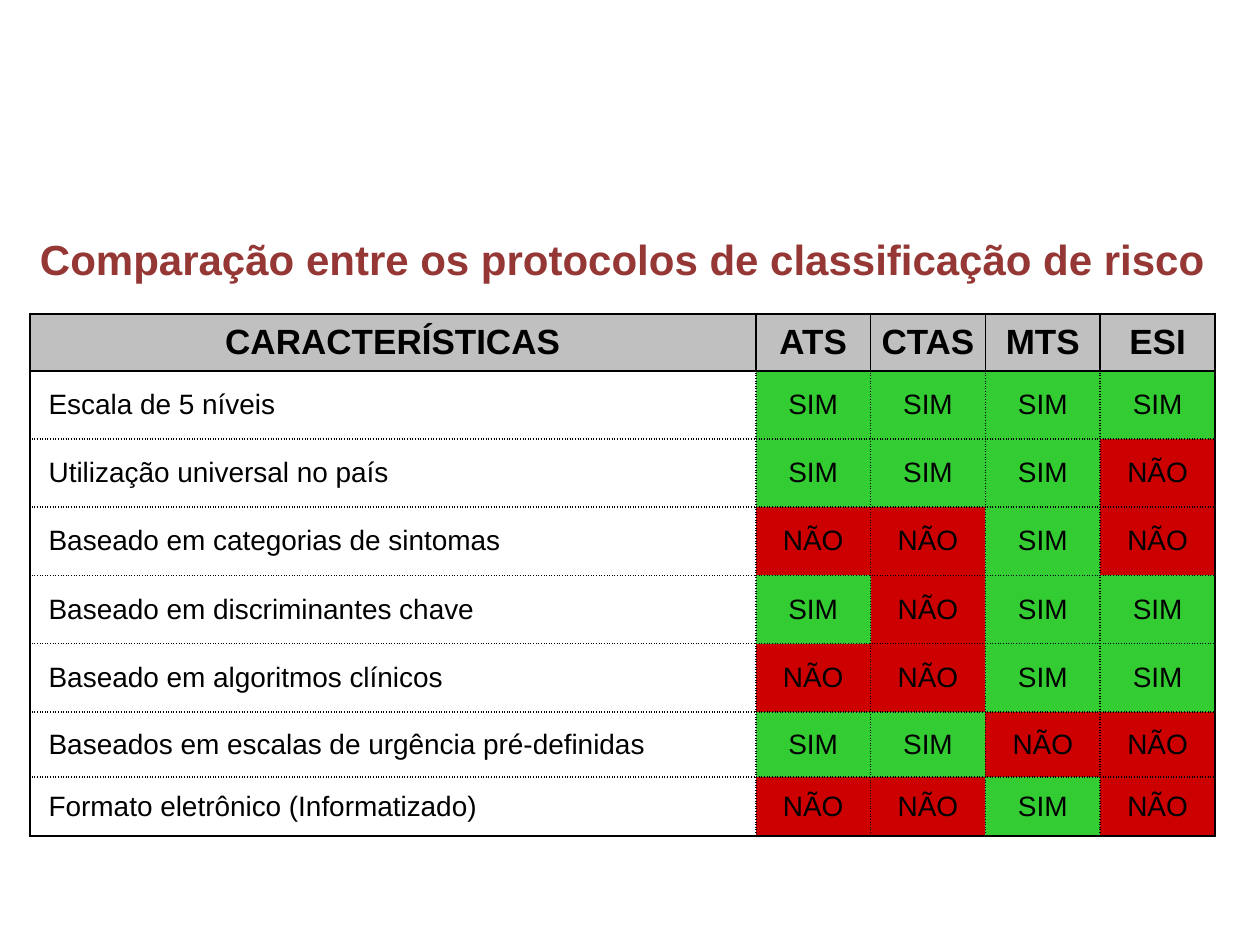
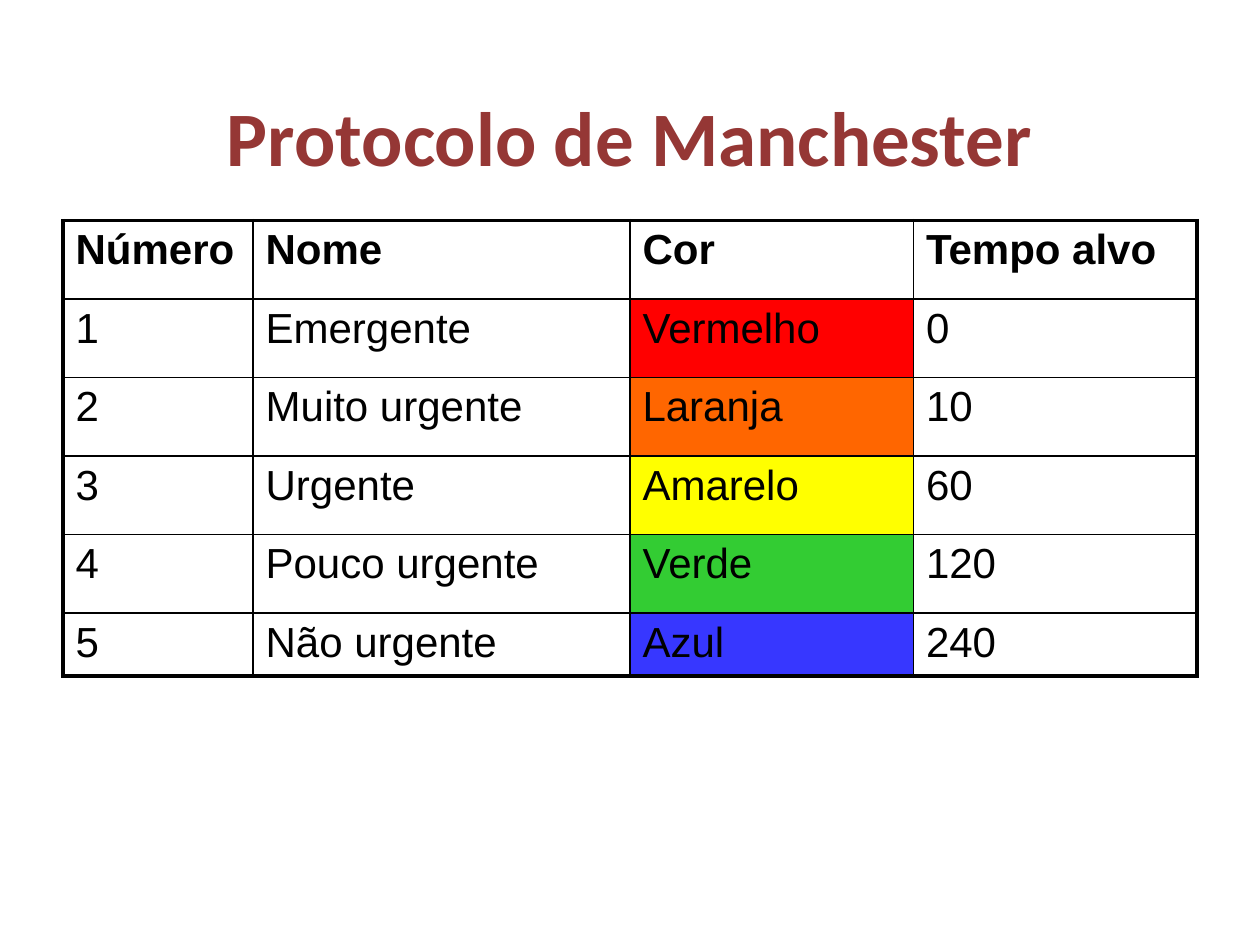
import pptx
import pptx.util
import pptx.dml.color
import pptx.enum.text
import pptx.oxml.ns
from lxml import etree

Pt = pptx.util.Pt
ALIGN = pptx.enum.text.PP_ALIGN
ANCHOR = pptx.enum.text.MSO_ANCHOR

INK, WINE, GRAY = "000000", "953735", "C0C0C0"
GREEN, RED = "33CC33", "CC0000"
THIN, THICK = (1, "solid"), (2.25, "solid")
DOTS, NONE = (1, "sysDot"), None

RISK = "Comparação entre os protocolos de classificação de risco"
HEADS = ["CARACTERÍSTICAS", "ATS", "CTAS", "MTS", "ESI"]
TRAITS = [
    ("Escala de 5 níveis", "SSSS"),
    ("Utilização universal no país", "SSSN"),
    ("Baseado em categorias de sintomas", "NNSN"),
    ("Baseado em discriminantes chave", "SNSS"),
    ("Baseado em algoritmos clínicos", "NNSS"),
    ("Baseados em escalas de urgência pré-definidas", "SSNN"),
    ("Formato eletrônico (Informatizado)", "NNSN"),
]
ANSWERS = {"S": ("SIM", GREEN), "N": ("NÃO", RED)}

TRIAGE = "Protocolo de Manchester"
FIELDS = ["Número", "Nome", "Cor", "Tempo alvo"]
LEVELS = [
    ("Emergente", "Vermelho", "FF0000", 0),
    ("Muito urgente", "Laranja", "FF6600", 10),
    ("Urgente", "Amarelo", "FFFF00", 60),
    ("Pouco urgente", "Verde", GREEN, 120),
    ("Não urgente", "Azul", "3737FF", 240),
]


def color(text):
    return pptx.dml.color.RGBColor.from_string(text)


def write(frame, text, size, tint=INK, bold=False, align=ALIGN.LEFT, face="Arial"):
    para = frame.paragraphs[0]
    para.alignment = align
    run = para.add_run()
    run.text = text
    font = run.font
    font.name, font.size, font.bold = face, Pt(size), bold
    font.color.rgb = color(tint)


def dress(cell, edges, fill=None):
    """Draw the left, right, top and bottom edges, then the fill."""
    props = cell._tc.get_or_add_tcPr()
    qn = pptx.oxml.ns.qn
    for side, edge in zip("LRTB", edges):
        line = etree.SubElement(props, qn("a:ln" + side))
        if edge is NONE:
            line.set("w", "0")
            etree.SubElement(line, qn("a:noFill"))
            continue
        width, dash = edge
        line.set("w", str(int(Pt(width))))
        paint = etree.SubElement(line, qn("a:solidFill"))
        etree.SubElement(paint, qn("a:srgbClr"), val=INK)
        etree.SubElement(line, qn("a:prstDash"), val=dash)
    if fill:
        cell.fill.solid()
        cell.fill.fore_color.rgb = color(fill)
    else:
        cell.fill.background()


def grid(slide, left, top, cols, rows):
    frame = slide.shapes.add_table(len(rows), len(cols), Pt(left), Pt(top),
                                   Pt(sum(cols)), Pt(sum(rows)))
    table = frame.table
    table.first_row = table.horz_banding = False
    for col, width in zip(table.columns, cols):
        col.width = Pt(width)
    for row, height in zip(table.rows, rows):
        row.height = Pt(height)
    return table


def compare(slide):
    cols = [414.9] + [65.6] * 4
    rows = [61.2, 32.5] + [39] * 5 + [37.2, 33.7]
    table = grid(slide, 17, 118.2, cols, rows)
    for row in range(len(rows)):
        for col in range(len(cols)):
            cell = table.cell(row, col)
            cell.vertical_anchor = ANCHOR.MIDDLE
            cell.margin_left = cell.margin_right = Pt(5)
            cell.margin_top = cell.margin_bottom = 0
            if row == 0:
                dress(cell, [NONE, NONE, NONE, THIN])
            elif row == 1:
                dress(cell, [THIN] * 4, GRAY)
                write(cell.text_frame, HEADS[col], 20, bold=True, align=ALIGN.CENTER)
            else:
                label, marks = TRAITS[row - 2]
                text, fill, align = label, None, ALIGN.JUSTIFY
                if col:
                    text, fill = ANSWERS[marks[col - 1]]
                    align = ALIGN.CENTER
                else:
                    cell.margin_left = Pt(10.8)
                outer = [col == 0, col == len(cols) - 1, row == 2, row == len(rows) - 1]
                dress(cell, [THIN if out else DOTS for out in outer], fill)
                write(cell.text_frame, text, 16, align=align)
    title = table.cell(0, 0)
    title.merge(table.cell(0, len(cols) - 1))
    write(title.text_frame, RISK, 24, WINE, True, ALIGN.CENTER)


def triage(slide):
    box = slide.shapes.add_textbox(Pt(36), Pt(23), Pt(648), Pt(109))
    box.text_frame.word_wrap = True
    box.text_frame.vertical_anchor = ANCHOR.MIDDLE
    write(box.text_frame, TRIAGE, 44, WINE, True, ALIGN.CENTER, "Calibri")

    cols = [108.6, 215.4, 162, 162]
    rows = [44.9] * 5 + [34]
    table = grid(slide, 36, 126, cols, rows)
    lines = [(FIELDS, None)]
    for rank, (name, hue, fill, time) in enumerate(LEVELS, 1):
        lines.append(([str(rank), name, hue, str(time)], fill))
    for row, (texts, fill) in enumerate(lines):
        for col, text in enumerate(texts):
            cell = table.cell(row, col)
            outer = [col == 0, col == len(cols) - 1, row == 0, row == len(rows) - 1]
            dress(cell, [THICK if out else THIN for out in outer],
                  fill if col == 2 else None)
            write(cell.text_frame, text, 24, bold=row == 0)


def main():
    deck = pptx.Presentation()
    deck.slide_width, deck.slide_height = Pt(720), Pt(540)
    for build in (compare, triage):
        build(deck.slides.add_slide(deck.slide_layouts[6]))
    deck.save("out.pptx")


if __name__ == "__main__":
    main()
